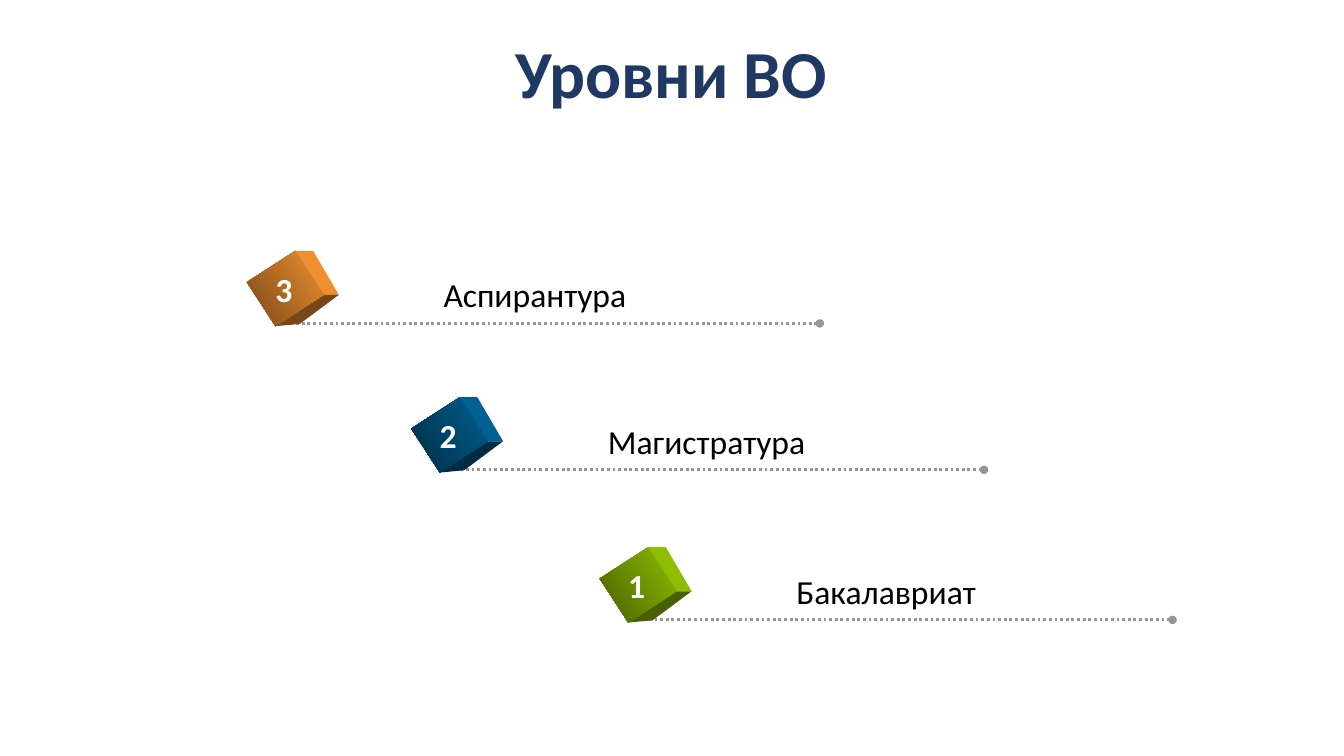
from dataclasses import dataclass

from lxml.etree import SubElement
from pptx import Presentation
from pptx.dml.color import RGBColor
from pptx.enum.dml import MSO_LINE
from pptx.enum.shapes import MSO_CONNECTOR, MSO_SHAPE
from pptx.enum.text import MSO_ANCHOR, MSO_AUTO_SIZE, PP_ALIGN
from pptx.oxml.ns import qn
from pptx.slide import Slide
from pptx.util import Cm, Pt

FONT = "Calibri"
NAVY = RGBColor(0x20, 0x38, 0x64)
BLACK = RGBColor(0x00, 0x00, 0x00)
WHITE = RGBColor(0xFF, 0xFF, 0xFF)
GRAY = RGBColor(0x96, 0x96, 0x96)
ORANGE = RGBColor(0xEE, 0x90, 0x30)
ORANGE_DARK = RGBColor(0x7A, 0x48, 0x18)
BLUE = RGBColor(0x00, 0x60, 0x92)
BLUE_DARK = RGBColor(0x00, 0x2C, 0x44)
GREEN = RGBColor(0x8E, 0xBE, 0x00)
GREEN_DARK = RGBColor(0x48, 0x60, 0x00)

LINE_LENGTH = 13.34
CUBE_WIDTH, CUBE_HEIGHT = 1.32, 1.45
CUBE_ANGLE = 57
RIGHT_FACE = [(0.25, -0.95), (0.7, -0.95), (1.35, 0.16), (0.97, 0.16)]
BOTTOM_FACE = [(-0.25, 0.95), (0.97, 0.16), (1.35, 0.16), (0.37, 0.89)]


@dataclass(frozen=True)
class Level:
    number: str
    name: str
    x: float
    y: float
    label_width: float
    light: RGBColor
    dark: RGBColor


LEVELS = [
    Level("1", "Бакалавриат", 16.21, 15.62, 5.08, GREEN, GREEN_DARK),
    Level("2", "Магистратура", 11.46, 11.84, 5.54, BLUE, BLUE_DARK),
    Level("3", "Аспирантура", 7.32, 8.15, 5.16, ORANGE, ORANGE_DARK),
]


def add_text(s: Slide, text: str, x: float, y: float, w: float, h: float,
             size: int, color: RGBColor, bold: bool = False):
    sp = s.shapes.add_textbox(Cm(x), Cm(y), Cm(w), Cm(h))
    tf = sp.text_frame
    tf.word_wrap = False
    tf.auto_size = MSO_AUTO_SIZE.SHAPE_TO_FIT_TEXT
    r = tf.paragraphs[0].add_run()
    r.text = text
    r.font.name = FONT
    r.font.size = Pt(size)
    r.font.bold = bold
    r.font.color.rgb = color
    return tf


def add_title(s: Slide) -> None:
    tf = add_text(s, "Уровни ВО", 5.97, 0.84, 21.89, 2.21, 48, NAVY, True)
    tf.auto_size = MSO_AUTO_SIZE.NONE
    tf.word_wrap = True
    tf.vertical_anchor = MSO_ANCHOR.MIDDLE
    p = tf.paragraphs[0]
    p.alignment = PP_ALIGN.CENTER
    p.line_spacing = 0.9


def add_dotted_line(s: Slide, x: float, y: float) -> None:
    cxn = s.shapes.add_connector(
        MSO_CONNECTOR.STRAIGHT, Cm(x), Cm(y), Cm(x + LINE_LENGTH), Cm(y))
    cxn.line.color.rgb = GRAY
    cxn.line.width = Pt(2)
    cxn.line.dash_style = MSO_LINE.ROUND_DOT
    SubElement(cxn.line._get_or_add_ln(), qn("a:tailEnd"), type="oval")
    SubElement(cxn._element.spPr, qn("a:effectLst"))


def add_face(s: Slide, cx: float, cy: float,
             corners: list[tuple[float, float]], color: RGBColor) -> None:
    points = [(Cm(cx + dx), Cm(cy + dy)) for dx, dy in corners]
    builder = s.shapes.build_freeform(*points[0])
    builder.add_line_segments(points[1:], close=True)
    sp = builder.convert_to_shape()
    sp.shadow.inherit = False
    sp.fill.solid()
    sp.fill.fore_color.rgb = color
    sp.line.fill.background()


def add_cube(s: Slide, cx: float, cy: float, level: Level) -> None:
    add_face(s, cx, cy, RIGHT_FACE, level.light)
    add_face(s, cx, cy, BOTTOM_FACE, level.dark)
    sp = s.shapes.add_shape(
        MSO_SHAPE.RECTANGLE, Cm(cx - CUBE_WIDTH / 2), Cm(cy - CUBE_HEIGHT / 2),
        Cm(CUBE_WIDTH), Cm(CUBE_HEIGHT))
    sp.rotation = CUBE_ANGLE
    sp.shadow.inherit = False
    sp.line.fill.background()
    sp.fill.gradient()
    sp.fill.gradient_angle = 270
    for stop, color in zip(sp.fill.gradient_stops, (level.light, level.dark)):
        stop.color.rgb = color


def add_level(s: Slide, level: Level) -> None:
    x, y = level.x, level.y
    add_dotted_line(s, x, y)
    add_cube(s, x - 0.13, y - 0.88, level)
    add_text(s, level.name, x + 3.61, y - 1.37, level.label_width, 1.3, 24, BLACK)
    add_text(s, level.number, x - 0.63, y - 1.5, 0.94, 1.3, 24, WHITE, True)


def main() -> None:
    prs = Presentation()
    prs.slide_width, prs.slide_height = Cm(33.87), Cm(19.05)
    s = prs.slides.add_slide(prs.slide_layouts[6])
    add_title(s)
    for level in LEVELS:
        add_level(s, level)
    prs.save("out.pptx")


if __name__ == "__main__":
    main()
